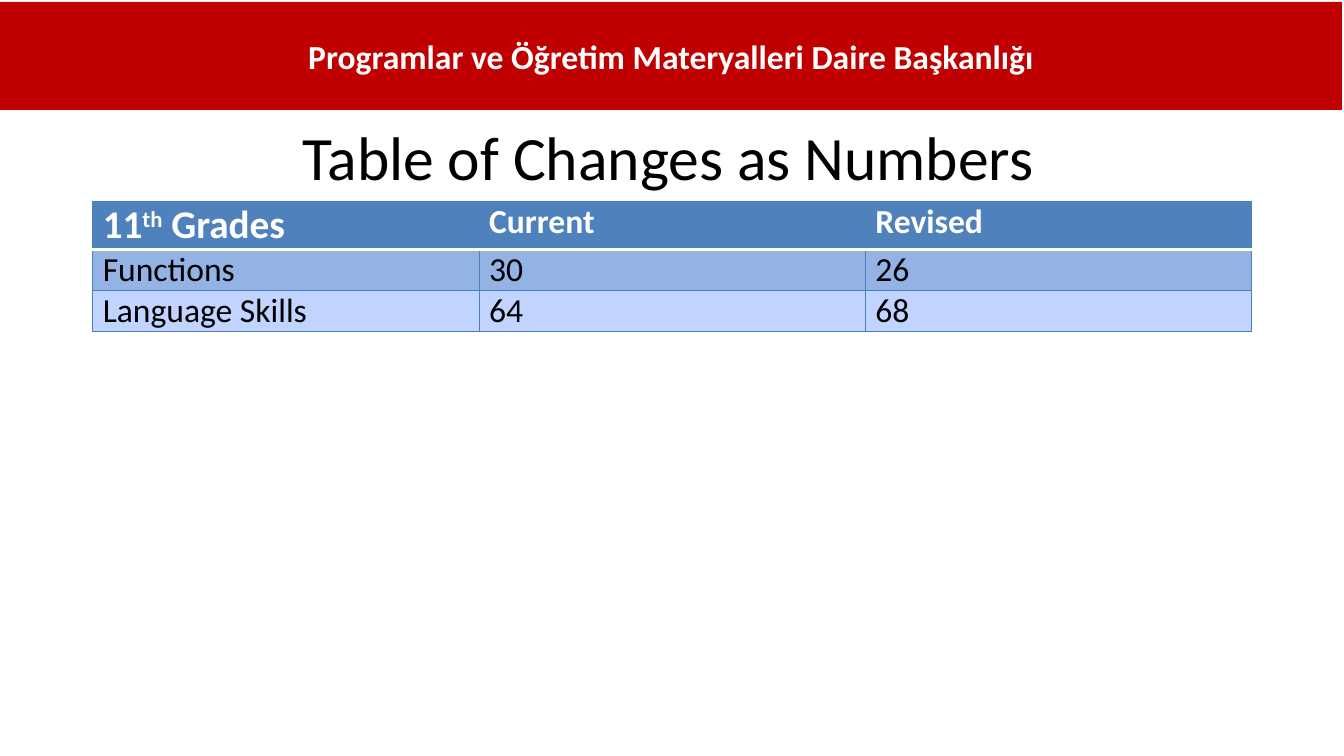
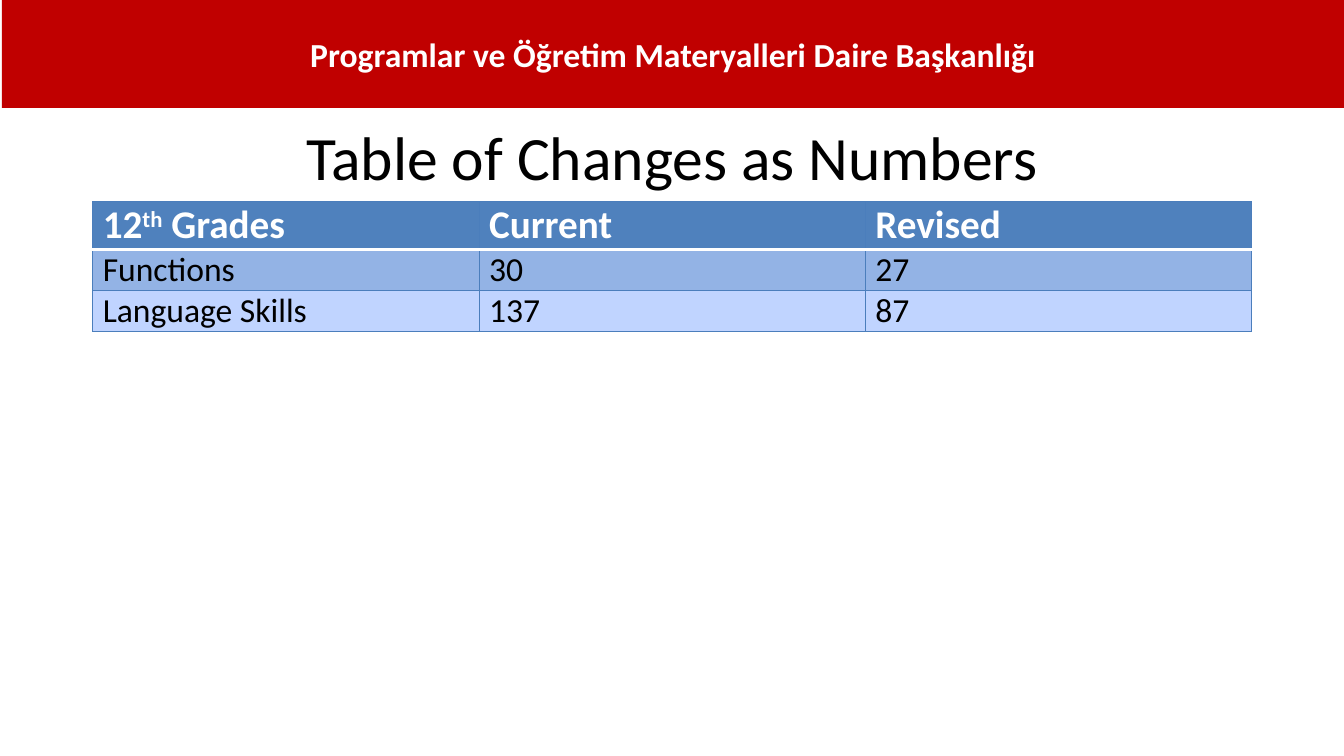
from dataclasses import dataclass
from typing import Any

from lxml import etree
from pptx import Presentation
from pptx import util as u
from pptx.dml.color import RGBColor
from pptx.enum import shapes, text
from pptx.oxml import ns
from pptx.slide import Slide

# Shared look
FONT = "Calibri"
RED, WHITE, BLACK = "C00000", "FFFFFF", "000000"
HEAD, EDGE = "4F81BD", "4B7EBC"
BANDS = ("93B3E5", "C0D4FF")
TITLE = "Table of Changes as Numbers"
OFFICE = "Programlar ve Öğretim Materyalleri Daire Başkanlığı"
WIDE = u.Cm(29.21)
TALL = (1.2, 1.03, 1.03)


@dataclass(frozen=True)
class Page:
    grade: str
    sizes: tuple[int, int, int]  # header text sizes
    rows: tuple[tuple[str, str, str], ...]
    left: float  # title, cm
    band: tuple[float, float]  # red band corner, cm


PAGES = (
    Page("11^th^ Grades", (28, 24, 24),
         (("Functions", "30", "26"), ("Language Skills", "64", "68")),
         2.24, (0, 0.05)),
    Page("12^th^ Grades", (28, 28, 28),
         (("Functions", "30", "27"), ("Language Skills", "137", "87")),
         2.34, (0.05, 0)),
)


def paint(part: Any, tone: str) -> None:
    """Give a fill a solid colour."""
    part.solid()
    part.fore_color.rgb = RGBColor.from_string(tone)


def style(para: Any, size: int, tone: str, bold: bool = False) -> None:
    """Format every run of a paragraph."""
    for run in para.runs:
        font = run.font
        font.name, font.size, font.bold = FONT, u.Pt(size), bold
        paint(font.fill, tone)


def border(cell: Any, side: str, tone: str, width: float) -> None:
    """Draw one cell edge; side is L, R, T or B."""
    line = etree.SubElement(cell._tc.get_or_add_tcPr(), ns.qn(f"a:ln{side}"),
                            w=str(u.Pt(width)))
    fill = etree.SubElement(line, ns.qn("a:solidFill"))
    etree.SubElement(fill, ns.qn("a:srgbClr"), val=tone)


def write(cell: Any, words: str, row: int, size: int) -> None:
    """Fill one cell; words between carets are raised."""
    cell.margin_left = cell.margin_right = u.Cm(0.25)
    cell.margin_top = cell.margin_bottom = 0
    para = cell.text_frame.paragraphs[0]
    for num, piece in enumerate(words.split("^")):
        run = para.add_run()
        run.text = piece
        if num % 2:
            run._r.get_or_add_rPr().set("baseline", "30000")
    style(para, size, BLACK if row else WHITE, row == 0)
    # White rule between the header and the first row
    for side in "LRTB":
        rule = (row, side) in ((0, "B"), (1, "T"))
        border(cell, side, WHITE if rule else EDGE, 2 if rule else 0.75)
    paint(cell.fill, BANDS[(row - 1) % 2] if row else HEAD)


def head(slide: Slide, page: Page) -> None:
    """Place the slide title."""
    box = slide.shapes.title
    box.left, box.top = u.Cm(page.left), u.Cm(2.08)
    box.width, box.height = WIDE, u.Cm(3.68)
    frame = box.text_frame
    frame.text = TITLE
    frame.vertical_anchor = text.MSO_ANCHOR.MIDDLE
    frame.paragraphs[0].alignment = text.PP_ALIGN.CENTER
    style(frame.paragraphs[0], 44, BLACK)


def grid(slide: Slide, page: Page) -> None:
    """Draw the table of counts."""
    rows = ((page.grade, "Current", "Revised"), *page.rows)
    table = slide.shapes.add_table(len(rows), 3, u.Cm(2.34), u.Cm(5.08),
                                   WIDE, u.Cm(sum(TALL))).table
    table.horz_banding = False
    for r, row in enumerate(rows):
        table.rows[r].height = u.Cm(TALL[r])
        for c, words in enumerate(row):
            write(table.cell(r, c), words, r, 24 if r else page.sizes[c])


def band(slide: Slide, page: Page) -> None:
    """Draw the red band with the office name."""
    left, top = page.band
    bar = slide.shapes.add_shape(shapes.MSO_SHAPE.RECTANGLE, u.Cm(left),
                                 u.Cm(top), u.Cm(33.82), u.Cm(2.72))
    bar.shadow.inherit = False
    paint(bar.fill, RED)
    bar.line.fill.background()
    frame = bar.text_frame
    frame.text = OFFICE
    frame.vertical_anchor = text.MSO_ANCHOR.MIDDLE
    frame.paragraphs[0].alignment = text.PP_ALIGN.CENTER
    style(frame.paragraphs[0], 24, WHITE, True)


def main() -> None:
    deck = Presentation()
    deck.slide_width, deck.slide_height = u.Cm(33.87), u.Cm(19.05)
    for page in PAGES:
        slide = deck.slides.add_slide(deck.slide_layouts[5])  # title only
        for draw in (head, grid, band):
            draw(slide, page)
    deck.save("out.pptx")


if __name__ == "__main__":
    main()
